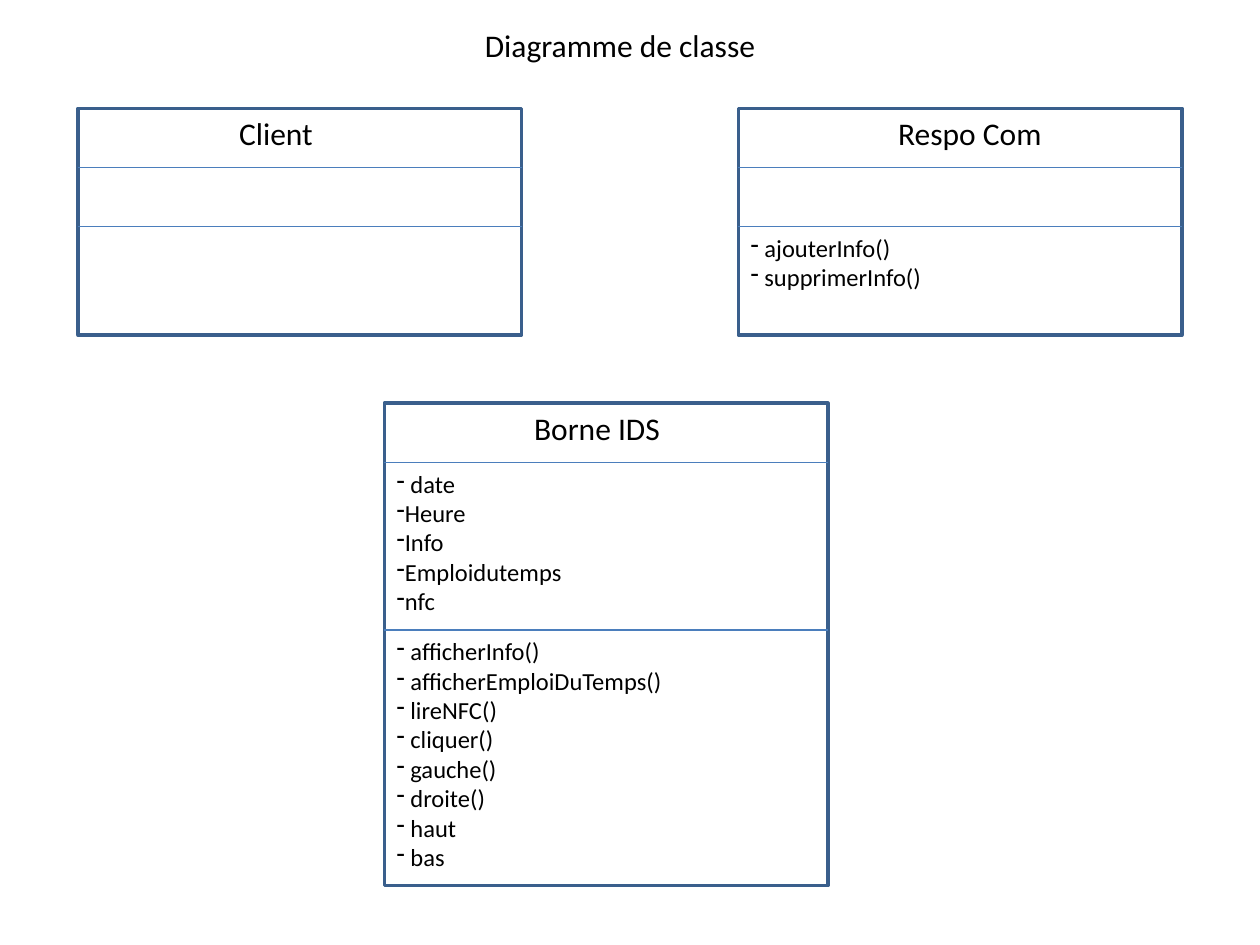
from lxml import etree
from pptx import Presentation
from pptx import util as u
from pptx.dml.color import RGBColor
from pptx.enum import shapes, text
from pptx.oxml.ns import qn

HEADING = {"words": "Diagramme de classe", "at": (3.75, 0.16, 2.42, 0.4)}
CLASSES = [
    {"name": "Client", "at": (0.62, 0.86), "height": 1.8,
     "name_inset": 1.18, "name_width": 0.86, "attributes_height": 0.47,
     "attributes": [], "methods": []},
    {"name": "Borne IDS", "at": (3.05, 3.2), "height": 3.83,
     "name_inset": 1.09, "name_width": 1.41, "attributes_height": 1.33,
     "attributes": [" date", "Heure", "Info", "Emploidutemps", "nfc"],
     "methods": [" afficherInfo()", " afficherEmploiDuTemps()", " lireNFC()",
                 " cliquer()", " gauche()", " droite()", " haut", " bas"]},
    {"name": "Respo Com", "at": (5.86, 0.86), "height": 1.8,
     "name_inset": 1.17, "name_width": 1.41, "attributes_height": 0.47,
     "attributes": [], "methods": [" ajouterInfo()", " supprimerInfo()"]},
]
CLASS_WIDTH, NAME_HEIGHT = 3.52, 0.47
LABEL_HEIGHT, MEMBER_HEIGHT, MEMBER_PADDING = 0.4, 0.235, 0.1

THEME = {
    "border": {"color": RGBColor.from_string("3A5F8C"), "width": u.Pt(2)},
    "divider": {"color": RGBColor.from_string("4B7EBC"), "width": u.Pt(0.75)},
    "ink": RGBColor.from_string("000000"),
    "title": {"name": "Calibri", "size": u.Pt(18)},
    "member": {"name": "Calibri", "size": u.Pt(14)},
}
FRAME = {"word_wrap": True, "auto_size": text.MSO_AUTO_SIZE.SHAPE_TO_FIT_TEXT,
         "vertical_anchor": text.MSO_ANCHOR.TOP}


def inches(values):
    return [u.Inches(round(value, 2)) for value in values]


def apply(target, values):
    for key, value in values.items():
        setattr(target, key, value)


def paint_line(line, style):
    line.color.rgb = style["color"]
    line.width = style["width"]


def add_lines(slide, at, lines, style, dashed=False):
    frame = slide.shapes.add_textbox(*inches(at)).text_frame
    apply(frame, FRAME)
    for index, words in enumerate(lines):
        paragraph = frame.paragraphs[0] if index == 0 else frame.add_paragraph()
        run = paragraph.add_run()
        run.text = words
        apply(run.font, style)
        run.font.color.rgb = THEME["ink"]
        if dashed:
            properties = paragraph._p.get_or_add_pPr()
            etree.SubElement(properties, qn("a:buFontTx"))
            etree.SubElement(properties, qn("a:buChar")).set("char", "-")


def add_divider(slide, left, top):
    divider = slide.shapes.add_connector(
        shapes.MSO_CONNECTOR.STRAIGHT, *inches((left, top, left + CLASS_WIDTH, top)))
    paint_line(divider.line, THEME["divider"])
    etree.SubElement(divider._element.spPr, qn("a:effectLst"))


def add_class(slide, uml):
    left, top = uml["at"]
    border = slide.shapes.add_shape(
        shapes.MSO_SHAPE.RECTANGLE, *inches((left, top, CLASS_WIDTH, uml["height"])))
    border.shadow.inherit = False
    border.fill.background()
    paint_line(border.line, THEME["border"])

    attributes_top = top + NAME_HEIGHT
    methods_top = attributes_top + uml["attributes_height"]
    add_lines(slide, (left + uml["name_inset"], top, uml["name_width"], LABEL_HEIGHT),
              [uml["name"]], THEME["title"])
    for section_top, members in ((attributes_top, uml["attributes"]),
                                 (methods_top, uml["methods"])):
        add_divider(slide, left, section_top)
        if members:
            height = MEMBER_PADDING + MEMBER_HEIGHT * len(members)
            add_lines(slide, (left, section_top, CLASS_WIDTH, height),
                      members, THEME["member"], dashed=True)


def main():
    deck = Presentation()
    apply(deck, {"slide_width": u.Inches(10), "slide_height": u.Inches(7.5)})
    slide = deck.slides.add_slide(deck.slide_layouts[6])
    add_lines(slide, HEADING["at"], [HEADING["words"]], THEME["title"])
    for uml in CLASSES:
        add_class(slide, uml)
    deck.save("out.pptx")


if __name__ == "__main__":
    main()
